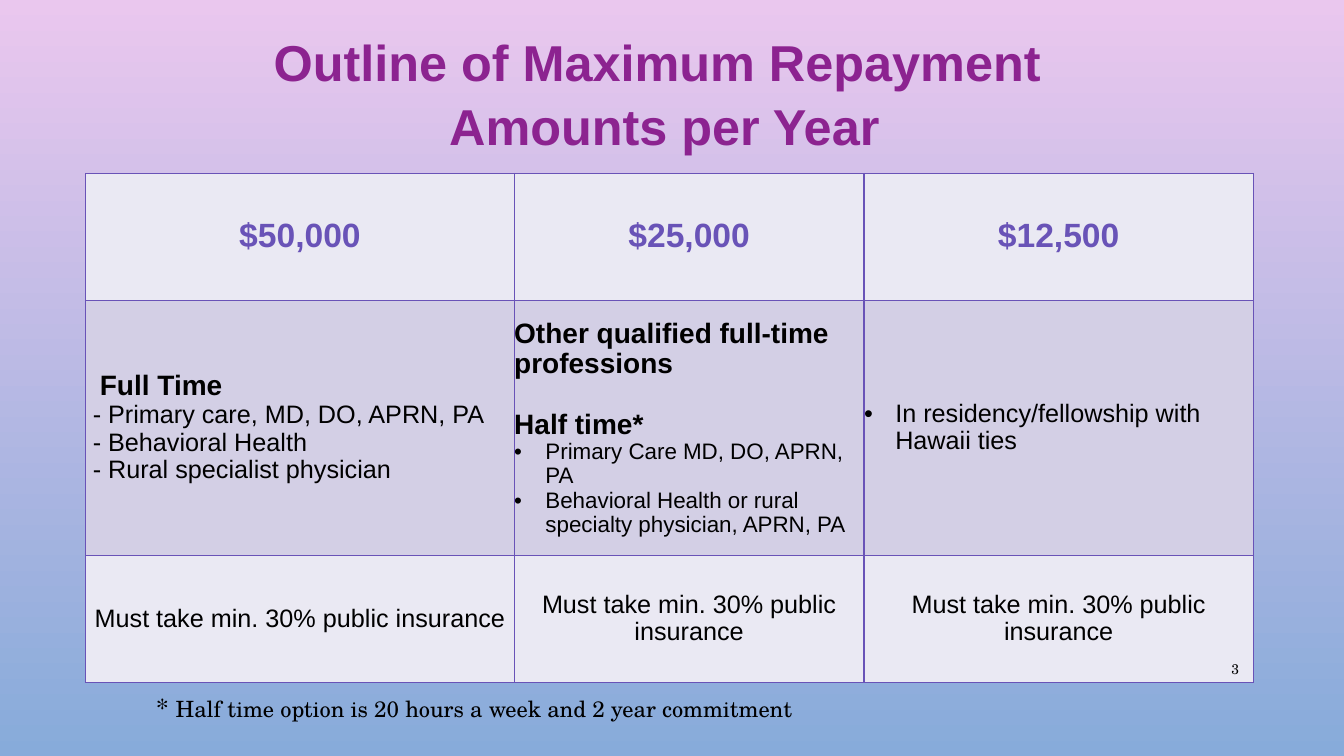
from lxml.etree import SubElement
from pptx import Presentation
from pptx.dml.color import RGBColor
from pptx.enum.text import MSO_ANCHOR as Anchor, PP_ALIGN as Align
from pptx.oxml.ns import qn
from pptx.util import Inches, Pt

PINK = RGBColor(0xEA, 0xC7, 0xEE)
BLUE = RGBColor(0x87, 0xAB, 0xDA)
PLUM = RGBColor(0x8C, 0x23, 0x90)
VIOLET = RGBColor(0x69, 0x53, 0xB7)
LIGHT = RGBColor(0xEA, 0xE9, 0xF3)
MID = RGBColor(0xD3, 0xCF, 0xE5)
BLACK = RGBColor(0, 0, 0)
SANS = "Arial"
SERIF = "TeX Gyre Schola"

COLS = [4.25, 3.47, 3.86]
ROWS = [1.26, 2.53, 1.26]
FILLS = [LIGHT, MID, LIGHT]
AMOUNTS = ["$50,000", "$25,000", "$12,500"]
TERMS = "Must take min. 30% public insurance"
GROUPS = [
    [
        ("Full Time", dict(size=20, bold=True, indent=0.14)),
        ("- Primary care, MD, DO, APRN, PA", dict(indent=0.07)),
        ("- Behavioral Health", dict(indent=0.07)),
        ("- Rural specialist physician", dict(indent=0.07)),
    ],
    [
        ("Other qualified full-time professions", dict(size=20, bold=True)),
        ("Half time*", dict(size=20, bold=True, before=22)),
        ("Primary Care MD, DO, APRN, PA", dict(size=16, bullet=True)),
        ("Behavioral Health or rural specialty physician, APRN, PA",
         dict(size=16, bullet=True)),
    ],
    [("In residency/fellowship with Hawaii ties", dict(bullet=True))],
]


def add_run(para, text, size=18, font=SANS, color=BLACK, bold=False):
    run = para.add_run()
    run.text = text
    run.font.size = Pt(size)
    run.font.name = font
    run.font.color.rgb = color
    run.font.bold = bold


def write(frame, text, align=Align.LEFT, indent=0, bullet=False, before=0,
          space=0.97, **style):
    para = frame.paragraphs[0]
    if para.runs:
        para = frame.add_paragraph()
    para.alignment = align
    para.line_spacing = space
    if before:
        para.space_before = Pt(before)
    props = para._p.get_or_add_pPr()
    if bullet:
        props.set("marL", str(Inches(0.31)))
        props.set("indent", str(-Inches(0.31)))
        SubElement(props, qn("a:buFont")).set("typeface", SANS)
        SubElement(props, qn("a:buChar")).set("char", "•")
    elif indent:
        props.set("marL", str(Inches(indent)))
    add_run(para, text, **style)
    return para


def add_box(slide, left, top, width, height, inset=0, anchor=Anchor.TOP):
    box = slide.shapes.add_textbox(
        Inches(left), Inches(top), Inches(width), Inches(height))
    frame = box.text_frame
    frame.word_wrap = True
    frame.vertical_anchor = anchor
    frame.margin_left = frame.margin_right = Inches(inset)
    frame.margin_top = frame.margin_bottom = Inches(inset)
    return frame


def style_cell(cell, color):
    cell.margin_left = cell.margin_right = 0
    cell.margin_top = cell.margin_bottom = 0
    cell.vertical_anchor = Anchor.MIDDLE
    props = cell._tc.get_or_add_tcPr()
    for side in ("lnL", "lnR", "lnT", "lnB"):
        line = SubElement(props, qn(f"a:{side}"), w=str(Pt(1)))
        fill = SubElement(line, qn("a:solidFill"))
        SubElement(fill, qn("a:srgbClr"), val=str(VIOLET))
    cell.fill.solid()
    cell.fill.fore_color.rgb = color


def add_grid(slide):
    grid = slide.shapes.add_table(
        len(ROWS), len(COLS), Inches(0.85), Inches(1.72),
        Inches(sum(COLS)), Inches(sum(ROWS))).table
    for col, width in zip(grid.columns, COLS):
        col.width = Inches(width)
    for row, height, color in zip(grid.rows, ROWS, FILLS):
        row.height = Inches(height)
        for cell in row.cells:
            style_cell(cell, color)
    for col, (amount, group) in enumerate(zip(AMOUNTS, GROUPS)):
        write(grid.cell(0, col).text_frame, amount, align=Align.CENTER,
              size=24, color=VIOLET, bold=True)
        for text, style in group:
            write(grid.cell(1, col).text_frame, text, **style)
        write(grid.cell(2, col).text_frame, TERMS, align=Align.CENTER)


def paint(slide):
    fill = slide.background.fill
    fill.gradient()
    fill.gradient_angle = 270
    for stop, color, place in zip(fill.gradient_stops, (PINK, BLUE), (0, 1)):
        stop.color.rgb = color
        stop.position = place


def main():
    deck = Presentation()
    deck.slide_width = Inches(13.33)
    deck.slide_height = Inches(7.5)
    slide = deck.slides.add_slide(deck.slide_layouts[6])
    paint(slide)
    add_grid(slide)

    title = add_box(slide, 0.85, 0.28, 11.48, 1.21)
    for text in ("Outline of Maximum Repayment ", "Amounts per Year"):
        write(title, text, align=Align.CENTER, space=1.05, size=36,
              color=PLUM, bold=True)

    number = add_box(slide, 12.07, 6.5, 0.27, 0.27, 0.05, Anchor.MIDDLE)
    write(number, "3", align=Align.RIGHT, space=1.0, size=10, font=SERIF)

    note = add_box(slide, 1.45, 6.77, 9.93, 0.5, 0.1)
    para = write(note, "* ", space=1.0, font=SERIF)
    add_run(para, "Half time option is 20 hours a week and 2 year commitment",
            size=16, font=SERIF)
    deck.save("out.pptx")


if __name__ == "__main__":
    main()
